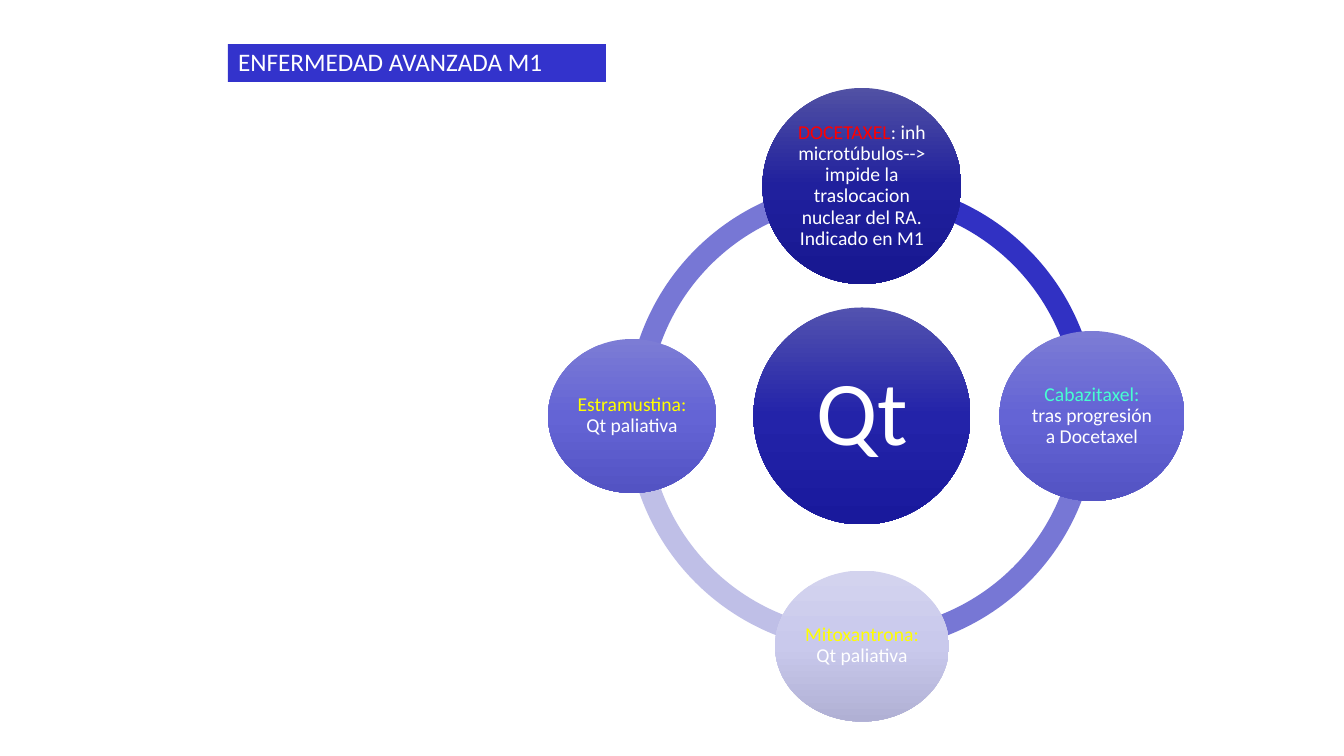
import copy
import math

import pptx
import pptx.dml.color
import pptx.enum.shapes
import pptx.enum.text
import pptx.oxml.ns
import pptx.util

EMU_PER_PX = 914400 / 100.8
SHAPE = pptx.enum.shapes.MSO_SHAPE
ALIGN = pptx.enum.text.PP_ALIGN
ANCHOR = pptx.enum.text.MSO_ANCHOR
FONT = "Calibri"

COLORS = {
    "title": "3333CC",
    "white": "FFFFFF",
    "red": "FF0000",
    "aqua": "47FFD1",
    "yellow": "FFFF00",
    "arc_dark": "3131C3",
    "arc_mid": "7777D5",
    "arc_light": "BFBFE7",
}
GRADIENTS = {
    "hub": ("5252AF", "2323A9", "19199C"),
    "dark": ("5151A4", "20209D", "171790"),
    "mid": ("7C7CD5", "6464D5", "5353C3"),
    "light": ("D3D3EE", "C9C9EC", "B0B0D4"),
}

CENTER_X, CENTER_Y = 862, 416
RING_SIZE = 471
ORBIT = 230

# Clockwise from the top: width, height, gradient, text runs
DRUGS = [
    (199, 196, "dark", [("DOCETAXEL", "red"),
                        (": inh microtúbulos--> impide la traslocacion "
                         "nuclear del RA. Indicado en M1", "white")]),
    (185, 170, "mid", [("Cabazitaxel:", "aqua"),
                       (" tras progresión a Docetaxel", "white")]),
    (174, 151, "light", [("Mitoxantrona: ", "yellow"),
                         ("Qt paliativa", "white")]),
    (168, 154, "mid", [("Estramustina: ", "yellow"),
                       ("Qt paliativa", "white")]),
]
# Start angle in degrees and colour, in drawing order
ARCS = [(180, "arc_mid"), (90, "arc_light"), (0, "arc_mid"), (270, "arc_dark")]


def px(n):
    return pptx.util.Emu(round(n * EMU_PER_PX))


def rgb(value):
    return pptx.dml.color.RGBColor.from_string(value)


def format_run(r, size, color):
    r.font.name = FONT
    r.font.size = pptx.util.Pt(size)
    r.font.color.rgb = rgb(COLORS[color])


def add_centered(s, kind, cx, cy, width, height):
    sp = s.shapes.add_shape(kind, px(cx - width / 2), px(cy - height / 2),
                            px(width), px(height))
    sp.shadow.inherit = False
    sp.line.fill.background()
    return sp


def fill_gradient(sp, colors):
    """Fill from top to bottom with evenly spaced stops."""
    fill = sp.fill
    fill.gradient()
    fill.gradient_angle = 270
    stops = next(sp.element.spPr.iter(pptx.oxml.ns.qn("a:gsLst")))
    while len(stops) < len(colors):
        stops.append(copy.deepcopy(stops[0]))
    for i, (stop, color) in enumerate(zip(fill.gradient_stops, colors)):
        stop.position = i / (len(colors) - 1)
        stop.color.rgb = rgb(color)


def add_title(s, text):
    sp = s.shapes.title
    sp.left, sp.top, sp.width, sp.height = px(228), px(44), px(378), px(38)
    sp.fill.solid()
    sp.fill.fore_color.rgb = rgb(COLORS["title"])
    tf = sp.text_frame
    tf.text = text
    tf.word_wrap = True
    tf.auto_size = pptx.enum.text.MSO_AUTO_SIZE.NONE
    tf.vertical_anchor = ANCHOR.MIDDLE
    p = tf.paragraphs[0]
    p.alignment = ALIGN.LEFT
    p.line_spacing = 0.93
    format_run(p.runs[0], 18, "white")


def add_arc(s, start, color):
    """Draw a quarter of the ring."""
    sp = add_centered(s, SHAPE.BLOCK_ARC, CENTER_X, CENTER_Y,
                      RING_SIZE, RING_SIZE)
    # Angles are stored in 60000ths of a degree, adjustments in 100000ths
    sp.adjustments[0] = start * 0.6
    sp.adjustments[1] = (start + 90) % 360 * 0.6
    sp.adjustments[2] = 0.046
    sp.fill.solid()
    sp.fill.fore_color.rgb = rgb(COLORS[color])


def add_circle(s, cx, cy, width, height, gradient, runs, size, inset):
    sp = add_centered(s, SHAPE.OVAL, cx, cy, width, height)
    fill_gradient(sp, GRADIENTS[gradient])
    tf = sp.text_frame
    tf.word_wrap = True
    tf.vertical_anchor = ANCHOR.MIDDLE
    tf.margin_left = tf.margin_right = px(inset)
    tf.margin_top = tf.margin_bottom = px(inset)
    p = tf.paragraphs[0]
    p.alignment = ALIGN.CENTER
    p.line_spacing = 0.9
    for text, color in runs:
        r = p.add_run()
        r.text = text
        format_run(r, size, color)


def main():
    prs = pptx.Presentation()
    prs.slide_width, prs.slide_height = px(1344), px(756)
    s = prs.slides.add_slide(prs.slide_layouts.get_by_name("Title Only"))
    add_title(s, "ENFERMEDAD AVANZADA M1")
    for start, color in ARCS:
        add_arc(s, start, color)
    add_circle(s, CENTER_X, CENTER_Y, 217, 217, "hub", [("Qt", "white")], 65, 9)
    for i, (width, height, gradient, runs) in enumerate(DRUGS):
        angle = math.tau * i / len(DRUGS)
        add_circle(s, CENTER_X + ORBIT * math.sin(angle),
                   CENTER_Y - ORBIT * math.cos(angle),
                   width, height, gradient, runs, 14, 2)
    prs.save("out.pptx")


if __name__ == "__main__":
    main()
